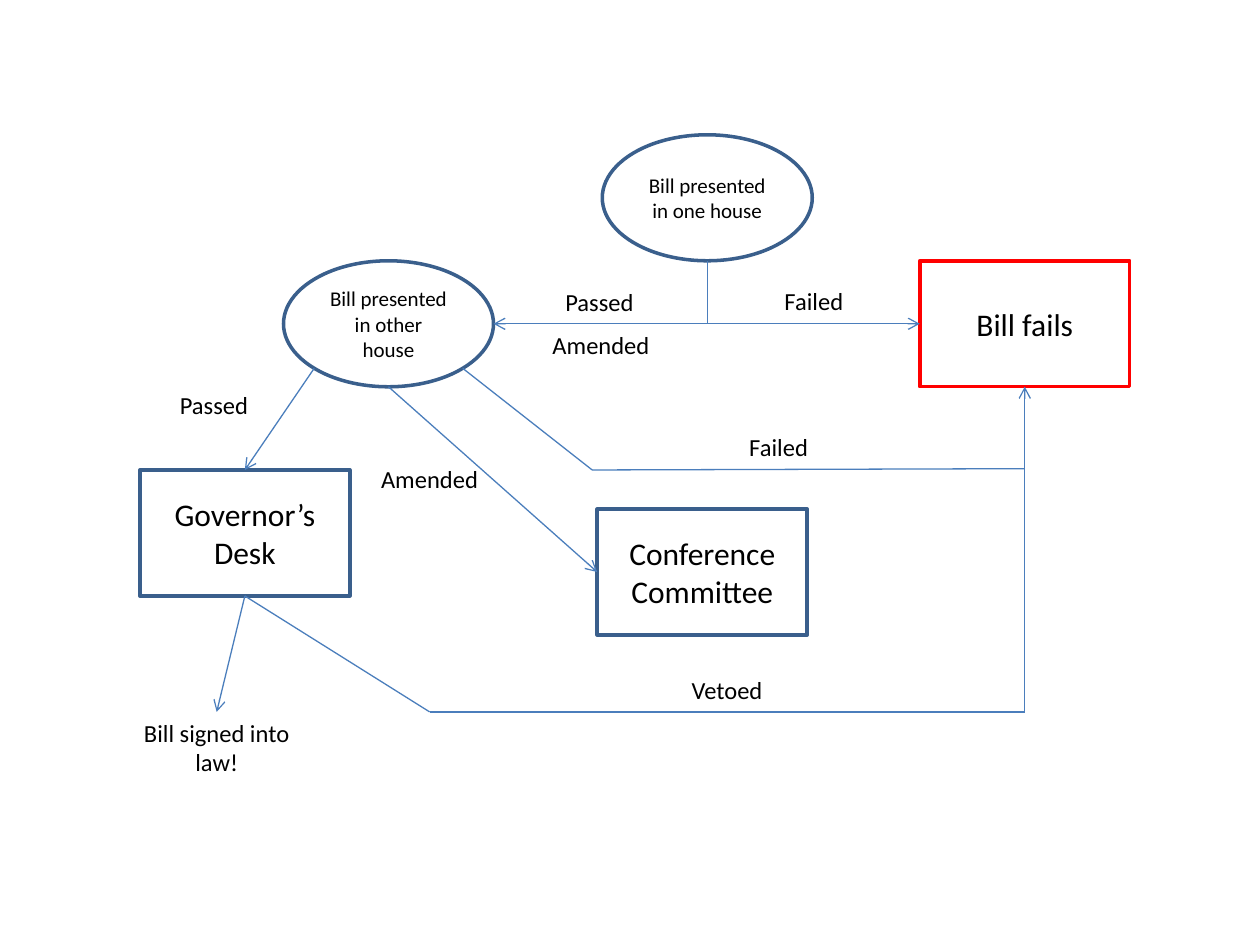
"""Draw a flowchart of how a bill becomes law."""
from dataclasses import dataclass
from math import sqrt

from pptx import Presentation
from pptx.dml.color import RGBColor as RGB
from pptx.enum.shapes import MSO_CONNECTOR as Line, MSO_SHAPE as Shape
from pptx.enum.text import MSO_ANCHOR as Anchor, MSO_AUTO_SIZE as AutoSize, PP_ALIGN as Align
from pptx.oxml.ns import qn
from pptx.util import Inches, Pt
from lxml.etree import SubElement


@dataclass(frozen=True)
class Theme:
    font: str = "Calibri"
    text: RGB = RGB(0, 0, 0)
    paper: RGB = RGB(255, 255, 255)
    border: RGB = RGB(0x3A, 0x5F, 0x8C)
    alert: RGB = RGB(255, 0, 0)
    flow: RGB = RGB(0x4B, 0x7E, 0xBC)
    step_size: int = 12
    label_size: int = 14
    box_size: int = 18
    border_width: float = 2
    flow_width: float = 0.75


THEME = Theme()
CELL = Inches(10) / 60
NODE_W, NODE_H = 10, 6


def grid(*counts):
    return [round(n * CELL) for n in counts]


def write(sp, text, size):
    tf = sp.text_frame
    tf.word_wrap = True
    p = tf.paragraphs[0]
    p.text, p.alignment = text, Align.CENTER
    p.font.name, p.font.size = THEME.font, Pt(size)
    p.font.color.rgb = THEME.text
    return tf


def add_node(s, kind, col, row, text, size, color=THEME.border):
    sp = s.shapes.add_shape(kind, *grid(col, row, NODE_W, NODE_H))
    sp.shadow.inherit = False
    sp.fill.solid()
    sp.fill.fore_color.rgb = THEME.paper
    sp.line.color.rgb, sp.line.width = color, Pt(THEME.border_width)
    write(sp, text, size).vertical_anchor = Anchor.MIDDLE
    return col, row


def add_label(s, col, row, text, width=6, height=2.04):
    sp = s.shapes.add_textbox(*grid(col, row, width, height))
    write(sp, text, THEME.label_size).auto_size = AutoSize.SHAPE_TO_FIT_TEXT


def add_flow(s, *points, arrow=True):
    """Join the points with lines, the last one ending in an arrowhead if asked."""
    for start, end in zip(points, points[1:]):
        c = s.shapes.add_connector(Line.STRAIGHT, *grid(*start, *end))
        c.line.color.rgb, c.line.width = THEME.flow, Pt(THEME.flow_width)
        if arrow and end == points[-1]:
            SubElement(c.line._get_or_add_ln(), qn("a:tailEnd"), type="arrow")
        SubElement(c._element.spPr, qn("a:effectLst"))


def side(node, x, y):
    """Return the point of a node at a share of its width and height."""
    return node[0] + x * NODE_W, node[1] + y * NODE_H


def main():
    prs = Presentation()
    prs.slide_width, prs.slide_height = grid(60, 45)
    s = prs.slides.add_slide(prs.slide_layouts[6])

    one_house = add_node(s, Shape.OVAL, 28.68, 6.42, "Bill presented in one house", THEME.step_size)
    other_house = add_node(s, Shape.OVAL, 13.5, 12.42, "Bill presented in other house", THEME.step_size)
    fails = add_node(s, Shape.RECTANGLE, 43.8, 12.42, "Bill fails", THEME.box_size, THEME.alert)
    committee = add_node(s, Shape.RECTANGLE, 28.44, 24.24, "Conference Committee", THEME.box_size)
    desk = add_node(s, Shape.RECTANGLE, 6.66, 22.38, "Governor’s Desk", THEME.box_size)

    near, far = 0.5 - sqrt(0.125), 0.5 + sqrt(0.125)
    fork = side(one_house, 0.5, 1.5)
    fails_bottom, desk_bottom = side(fails, 0.5, 1), side(desk, 0.5, 1)
    failed_row, vetoed_row = desk[1], 33.9

    add_flow(s, side(one_house, 0.5, 1), fork, arrow=False)
    add_flow(s, fork, side(fails, 0, 0.5))
    add_flow(s, fork, side(other_house, 1, 0.5))
    add_flow(s, side(other_house, near, far), side(desk, 0.5, 0))
    add_flow(s, side(other_house, 0.5, 1), side(committee, 0, 0.5))
    add_flow(s, side(other_house, far, far), (28.2, failed_row),
             (fails_bottom[0], failed_row - 0.06), fails_bottom)
    add_flow(s, desk_bottom, (10.32, vetoed_row))
    add_flow(s, desk_bottom, (20.46, vetoed_row), (fails_bottom[0], vetoed_row),
             fails_bottom, arrow=False)

    for col, row, text in (
        (25.68, 13.38, "Passed "), (25.62, 15.42, "Amended"), (35.76, 13.32, "Failed"),
        (34.08, 20.28, "Failed"), (7.32, 18.3, "Passed "), (17.46, 21.78, "Amended"),
        (31.62, 31.86, "Vetoed"),
    ):
        add_label(s, col, row, text)
    add_label(s, 5.94, vetoed_row, "Bill signed into law!", 8.76, 3.42)

    prs.save("out.pptx")


if __name__ == "__main__":
    main()
